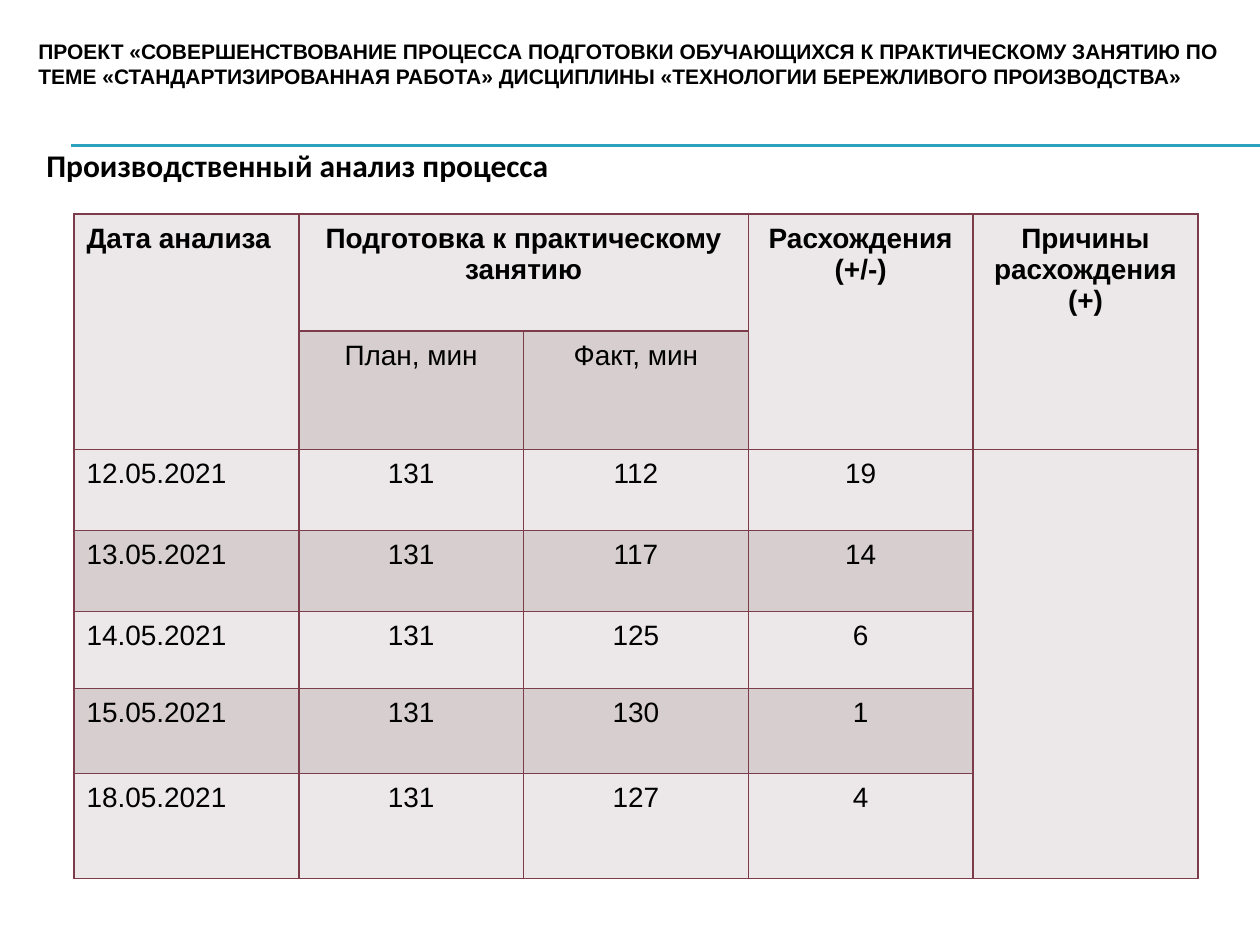
from lxml.etree import SubElement
from pptx import Presentation
from pptx.dml.color import RGBColor
from pptx.enum.shapes import MSO_CONNECTOR
from pptx.enum.text import MSO_ANCHOR, PP_ALIGN
from pptx.oxml.ns import qn
from pptx.util import Pt

PX = 914400 // 126
BLACK = RGBColor(0x00, 0x00, 0x00)
TEAL = RGBColor(0x2D, 0xA2, 0xBF)
WINE = RGBColor(0x7D, 0x3C, 0x4A)
LIGHT = RGBColor(0xEC, 0xE8, 0xE9)
DARK = RGBColor(0xD7, 0xCE, 0xD0)

TITLE = ("ПРОЕКТ «СОВЕРШЕНСТВОВАНИЕ ПРОЦЕССА ПОДГОТОВКИ ОБУЧАЮЩИХСЯ "
         "К ПРАКТИЧЕСКОМУ ЗАНЯТИЮ ПО ТЕМЕ «СТАНДАРТИЗИРОВАННАЯ РАБОТА» "
         "ДИСЦИПЛИНЫ «ТЕХНОЛОГИИ БЕРЕЖЛИВОГО ПРОИЗВОДСТВА»")
ROWS = [
    ["Дата анализа", "Подготовка к практическому занятию", "",
     "Расхождения\n(+/-)", "Причины расхождения\n(+)"],
    ["", "План, мин", "Факт, мин", "", ""],
    ["12.05.2021", "131", "112", "19", ""],
    ["13.05.2021", "131", "117", "14", ""],
    ["14.05.2021", "131", "125", "6", ""],
    ["15.05.2021", "131", "130", "1", ""],
    ["18.05.2021", "131", "127", "4", ""],
]
HEIGHTS = [117, 81, 81, 81, 77, 85, 105]
# First row, first column, last row, last column
MERGES = [(0, 0, 1, 0), (0, 1, 0, 2), (0, 3, 1, 3), (0, 4, 1, 4), (2, 4, 6, 4)]


def scale(*box):
    return [n * PX for n in box]


def write(frame, text, size=16, font="Arial", bold=False, align=PP_ALIGN.LEFT):
    frame.text = text
    for para in frame.paragraphs:
        para.alignment = align
        for run in para.runs:
            run.font.size = Pt(size)
            run.font.name = font
            run.font.bold = bold
            run.font.color.rgb = BLACK


def label(slide, box, text, **style):
    frame = slide.shapes.add_textbox(*scale(*box)).text_frame
    frame.word_wrap = True
    frame.vertical_anchor = MSO_ANCHOR.MIDDLE
    write(frame, text, bold=True, **style)


def rule(slide, left, top, right):
    """Draw the double line under the title."""
    for y in (top, top + 1):
        line = slide.shapes.add_connector(
            MSO_CONNECTOR.STRAIGHT, *scale(left, y, right, y))
        line.line.color.rgb = TEAL
        line.line.width = Pt(0.75)
        SubElement(line._element.spPr, qn("a:effectLst"))


def edge(cell):
    """Give a cell a border on all four sides."""
    props = cell._tc.get_or_add_tcPr()
    for side in ("lnL", "lnR", "lnT", "lnB"):
        line = SubElement(props, qn(f"a:{side}"), w=str(Pt(1)))
        fill = SubElement(line, qn("a:solidFill"))
        SubElement(fill, qn("a:srgbClr"), val=str(WINE))


def grid(slide, left, top, width):
    count = len(ROWS[0])
    frame = slide.shapes.add_table(
        len(ROWS), count, *scale(left, top, width, sum(HEIGHTS)))
    table = frame.table
    table.first_row = table.horz_banding = False
    for col in table.columns:
        col.width = width * PX // count
    for r, (row, high) in enumerate(zip(ROWS, HEIGHTS)):
        table.rows[r].height = high * PX
        for c, text in enumerate(row):
            cell = table.cell(r, c)
            edge(cell)
            cell.fill.solid()
            cell.fill.fore_color.rgb = DARK if r % 2 else LIGHT
            cell.margin_top = cell.margin_bottom = 9 * PX
            write(cell.text_frame, text, bold=r == 0,
                  align=PP_ALIGN.CENTER if c else PP_ALIGN.LEFT)
    for r, c, end, last in MERGES:
        table.cell(r, c).merge(table.cell(end, last))


def main():
    deck = Presentation()
    deck.slide_width, deck.slide_height = scale(1260, 945)
    slide = deck.slides.add_slide(deck.slide_layouts[6])
    rule(slide, 71, 145, 1260)
    label(slide, (34, 136, 1066, 58), "Производственный анализ процесса",
          size=18, font="Calibri")
    grid(slide, 74, 214, 1124)
    label(slide, (26, 39, 1221, 49), TITLE, size=12)
    deck.save("out.pptx")


if __name__ == "__main__":
    main()
